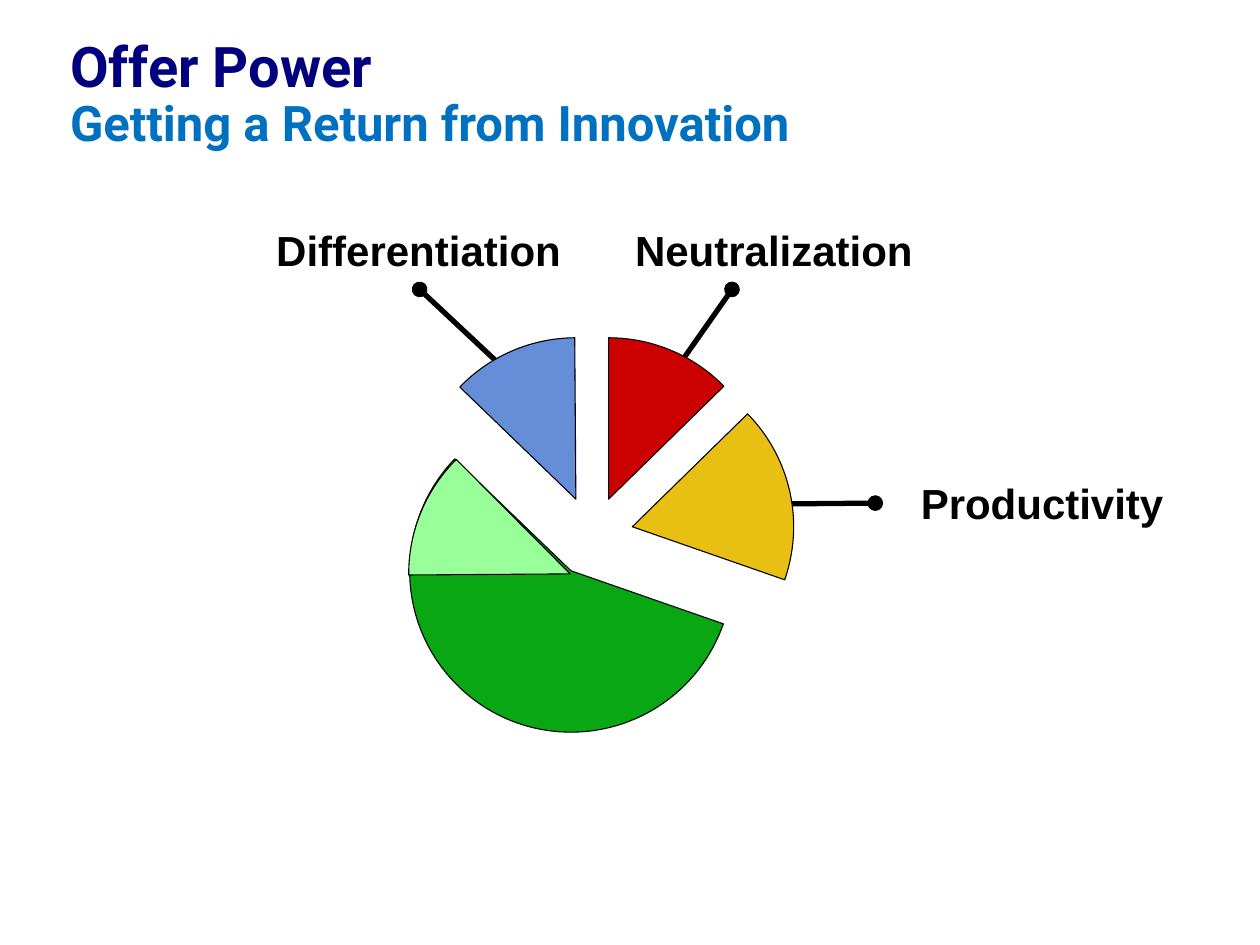
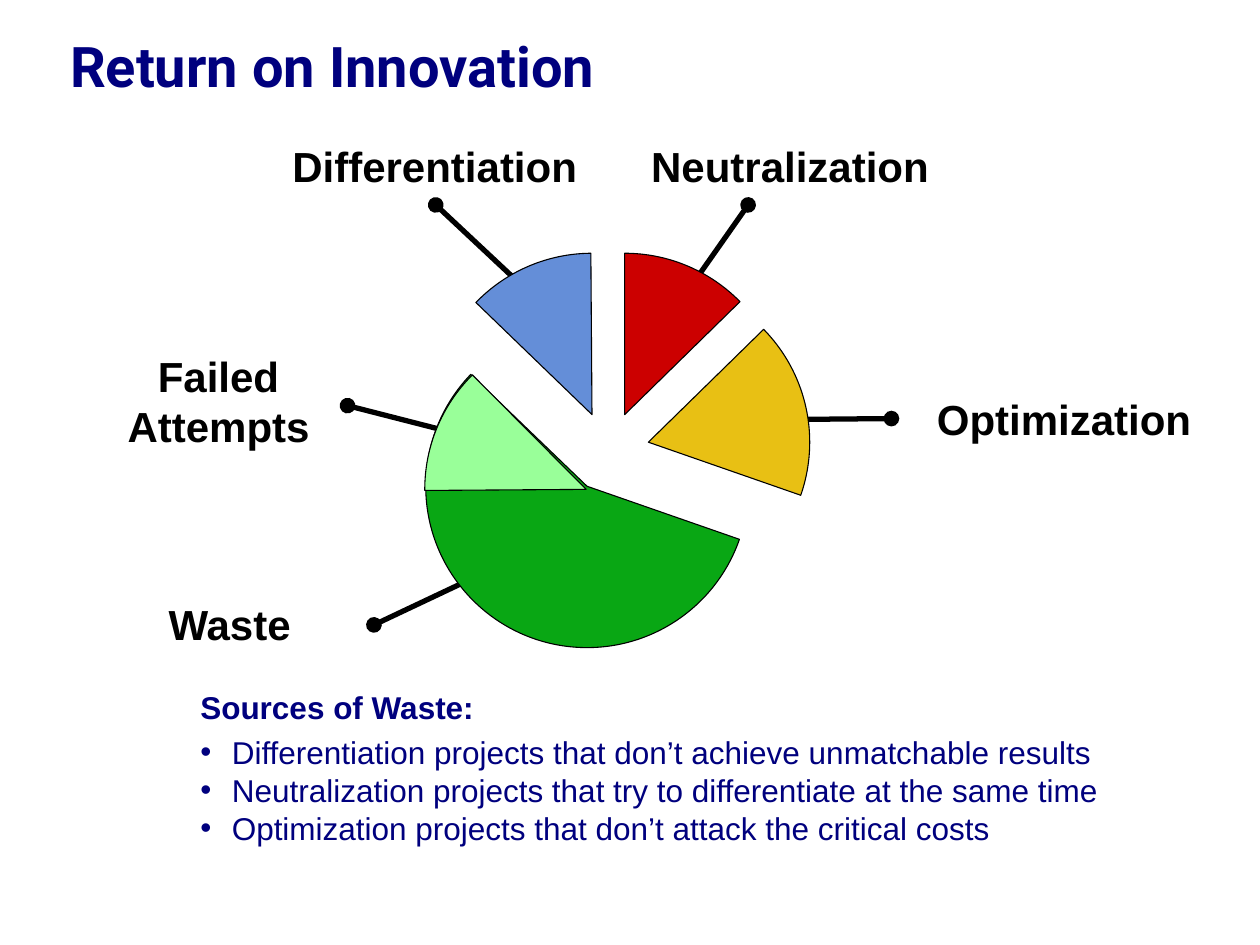
from math import cos, radians, sin, tan

from lxml import etree
from pptx import Presentation
from pptx.dml.color import RGBColor
from pptx.enum.shapes import MSO_CONNECTOR
from pptx.enum.text import MSO_AUTO_SIZE, PP_ALIGN
from pptx.oxml.ns import qn
from pptx.util import Pt

STRAIGHT = MSO_CONNECTOR.STRAIGHT
GROW, FIXED = MSO_AUTO_SIZE.SHAPE_TO_FIT_TEXT, MSO_AUTO_SIZE.NONE
LEFT, CENTER = PP_ALIGN.LEFT, PP_ALIGN.CENTER

COLORS = {
    "navy": "00007E",
    "sky": "0070C0",
    "black": "000000",
    "red": "CC0000",
    "gold": "E8C014",
    "green": "09A714",
    "blue": "648ED8",
    "mint": "99FF99",
}
TITLE_FONT, BODY_FONT = "Roboto", "Arial"
TITLE_BOX = (33, 18.7, 665, 78)
RADIUS = 92.2

# Colour, apex within the pie box, clockwise start and end angle from the top, rotation
WEDGES = [
    ("red", (114.5, 92.2), 0, 45.6, 0),
    ("gold", (128, 108), 45.6, 109.2, 0),
    ("green", (93, 133.2), 109.2, 313.9, 0),
    ("blue", (95.8, 92.2), 314, 359.6, 0),
    ("mint", (69.6, 171.4), 314.2, 359.8, -44.6),
]

# Label corner and height, then the inner and outer ends of its pointer, within the pie box
CALLOUTS = {
    "top left": ((-82.6, -68.2), 36, (70.6, 32.4), (6.5, -27.6), CENTER),
    "top right": ((122.4, -68.2), 36, (140.4, 36), (185, -27.6), CENTER),
    "right": ((285.8, 76.6), 36, (187.2, 95.2), (266.9, 94.5), LEFT),
    "left": ((-177.1, 51.8), 65, (32.4, 106.6), (-43.9, 87.1), CENTER),
    "bottom left": ((-153.8, 193.7), 36, (62.6, 169.2), (-28.8, 212.4), CENTER),
}


def color(name):
    return RGBColor.from_string(COLORS[name])


def style_font(font, name, size, color_name, bold):
    font.name = name
    font.size = Pt(size)
    font.bold = bold
    font.color.rgb = color(color_name)


def add_text(page, box, text, size, color_name, bold=True, font_name=BODY_FONT,
             wrap=True, align=LEFT, fit=GROW):
    """Add a text box and return its frame."""
    frame = page.shapes.add_textbox(*map(Pt, box)).text_frame
    frame.word_wrap = wrap
    frame.auto_size = fit
    frame.text = text
    for para in frame.paragraphs:
        para.alignment = align
        for span in para.runs:
            style_font(span.font, font_name, size, color_name, bold)
    return frame


def add_title(page, title, subtitle=None):
    text = f"{title}\v{subtitle}" if subtitle else title
    frame = add_text(page, TITLE_BOX, text, 32, "navy", font_name=TITLE_FONT, fit=FIXED)
    para = frame.paragraphs[0]
    para.line_spacing = 0.9
    for span in para.runs[1:]:
        style_font(span.font, TITLE_FONT, 28, "sky", True)


def add_pointer(page, start, end):
    """Draw a thick line with a dot at both ends."""
    pointer = page.shapes.add_connector(STRAIGHT, *map(Pt, start + end))
    pointer.line.width = Pt(3)
    pointer.line.color.rgb = color("black")
    line = pointer.line._get_or_add_ln()
    for end_tag in ("a:headEnd", "a:tailEnd"):
        etree.SubElement(line, qn(end_tag), type="oval")
    etree.SubElement(pointer._element.spPr, qn("a:effectLst"))


def add_wedge(page, color_name, apex, start, end, rotation):
    """Draw a pie slice whose arc is split into curves at the quarter turns."""
    def arc_point(angle, pull=0):
        turn = radians(angle)
        return (Pt(apex[0] + RADIUS * (sin(turn) + pull * cos(turn))),
                Pt(apex[1] - RADIUS * (cos(turn) - pull * sin(turn))))

    quarters = [angle for angle in (270, 180, 90) if start < angle < end]
    angles = [end, *quarters, start]
    corners = [arc_point(angle) for angle in angles]
    builder = page.shapes.build_freeform(*corners[0])
    builder.add_line_segments(corners[1:] + [tuple(map(Pt, apex))], close=True)
    wedge = builder.convert_to_shape()

    # Bend the sides along the arc
    sides = wedge._element.findall(".//" + qn("a:lnTo"))
    for side, first, last in zip(sides, angles, angles[1:]):
        pull = 4 / 3 * tan(radians(last - first) / 4)
        curve = etree.Element(qn("a:cubicBezTo"))
        for x, y in (arc_point(first, pull), arc_point(last, -pull), arc_point(last)):
            etree.SubElement(curve, qn("a:pt"), x=str(x - wedge.left), y=str(y - wedge.top))
        side.getparent().replace(side, curve)

    wedge.rotation = rotation
    wedge.shadow.inherit = False
    wedge.fill.solid()
    wedge.fill.fore_color.rgb = color(color_name)
    wedge.line.color.rgb = color("black")
    wedge.line.width = Pt(0.63)


def add_pie(page, left, top, labels):
    """Place the exploded pie and its callouts from the pie's top left corner."""
    def shift(point):
        return (left + point[0], top + point[1])

    # Pointers go behind the wedges
    for place, (label, width) in labels.items():
        corner, height, inner, outer, align = CALLOUTS[place]
        add_text(page, shift(corner) + (width, height), label, 24, "black",
                 wrap=False, align=align)
        add_pointer(page, shift(inner), shift(outer))
    for color_name, apex, start, end, rotation in WEDGES:
        add_wedge(page, color_name, shift(apex), start, end, rotation)


def add_bullet_list(page, left, top, width, heading, items):
    add_text(page, (left, top, width, 29), heading, 18, "navy")
    frame = add_text(page, (left, top + 25.8, width, 73), "\n".join(items), 18, "navy",
                     bold=False)
    for para in frame.paragraphs:
        properties = para._p.get_or_add_pPr()
        properties.set("marL", str(Pt(18)))
        properties.set("indent", str(Pt(-18)))
        etree.SubElement(properties, qn("a:buFont"), typeface=BODY_FONT)
        etree.SubElement(properties, qn("a:buChar"), char="•")


def build_offer_power(page):
    add_title(page, "Offer Power", "Getting a Return from Innovation")
    add_pie(page, 233.3, 193, {
        "top left": ("Differentiation", 177),
        "top right": ("Neutralization", 173),
        "right": ("Productivity", 155),
    })


def build_return_on_innovation(page):
    add_title(page, "Return on Innovation")
    add_pie(page, 242.5, 144.7, {
        "top left": ("Differentiation", 177),
        "top right": ("Neutralization", 173),
        "right": ("Optimization", 161.3),
        "left": ("Failed\nAttempts", 119),
        "bottom left": ("Waste", 85),
    })
    add_bullet_list(page, 107.4, 389.5, 584, "Sources of Waste:", [
        "Differentiation projects that don’t achieve unmatchable results",
        "Neutralization projects that try to differentiate at the same time",
        "Optimization projects that don’t attack the critical costs",
    ])


def main():
    deck = Presentation()
    deck.slide_width, deck.slide_height = Pt(720), Pt(540)
    blank = deck.slide_layouts[6]
    for build in (build_offer_power, build_return_on_innovation):
        build(deck.slides.add_slide(blank))
    deck.save("out.pptx")


if __name__ == "__main__":
    main()
